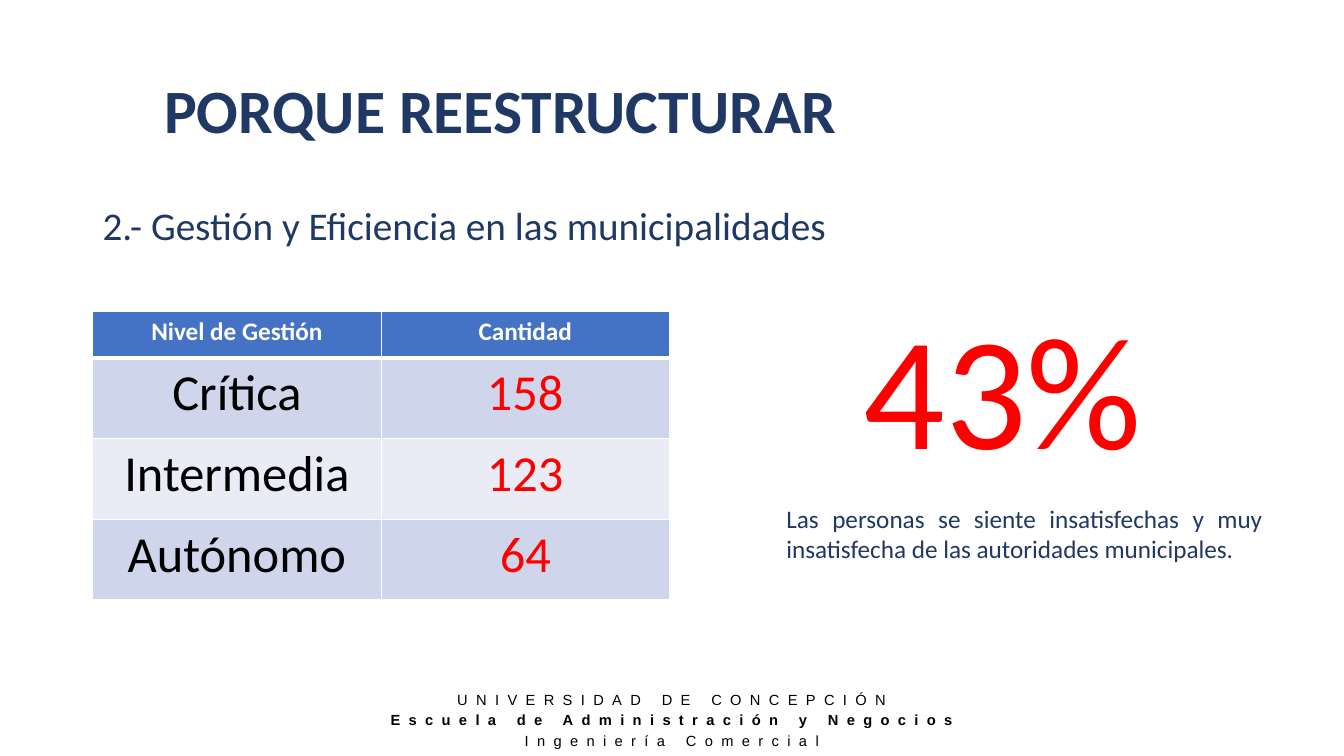
from lxml.etree import SubElement
from pptx import Presentation
from pptx.dml.color import RGBColor
from pptx.enum.text import MSO_ANCHOR as ANCHOR, PP_ALIGN as ALIGN
from pptx.oxml.ns import qn
from pptx.util import Pt

PX = 9144  # EMU per px, 100 px to the inch

NAVY = RGBColor(0x20, 0x38, 0x64)
RED = RGBColor(0xFF, 0x00, 0x00)
BLACK = RGBColor(0x00, 0x00, 0x00)
WHITE = RGBColor(0xFF, 0xFF, 0xFF)
BLUE = RGBColor(0x44, 0x72, 0xC4)
BANDS = (RGBColor(0xCF, 0xD5, 0xEA), RGBColor(0xE9, 0xEB, 0xF5))

# Content
TITLE = "PORQUE REESTRUCTURAR"
SUBTITLE = "2.- Gestión y Eficiencia en las municipalidades"
LEVELS = [
    ("Nivel de Gestión", "Cantidad"),
    ("Crítica", "158"),
    ("Intermedia", "123"),
    ("Autónomo", "64"),
]
SHARE = "43%"
SHARE_NOTE = ("Las personas se siente insatisfechas y muy insatisfecha "
              "de las autoridades municipales.")
FOOTER = [
    ("UNIVERSIDAD DE CONCEPCIÓN", False),
    ("Escuela de Administración y Negocios", True),
    ("Ingeniería Comercial", False),
]

# Layout in px: left, top, width, height
SLIDE = (1333, 750)
FOOTER_BOX = (0, 678, 1333, 72)
TITLE_BOX = (153, 40, 997, 145)
SUBTITLE_BOX = (92, 200, 1107, 67)
NOTE_BOX = (770, 494, 492, 71)
SHARE_BOX = (847, 281, 303, 204)
TABLE_LEFT, TABLE_TOP, COL_W, HEAD_H, ROW_H = 92, 309, 286, 46, 80


def emu(box):
    return [v * PX for v in box]


def style(p, size, color, bold=False, align=ALIGN.LEFT, name="Calibri"):
    p.alignment = align
    f = p.font
    f.size, f.bold, f.name = Pt(size), bold, name
    f.color.rgb = color


def add_text(box, text, size, color, bold=False, align=ALIGN.LEFT,
             anchor=ANCHOR.TOP, spacing=1.0, wrap=True):
    tf = s.shapes.add_textbox(*emu(box)).text_frame
    tf.word_wrap, tf.vertical_anchor = wrap, anchor
    p = tf.paragraphs[0]
    p.text, p.line_spacing = text, spacing
    style(p, size, color, bold, align)


def set_borders(cell, widths):
    tcPr = cell._tc.get_or_add_tcPr()
    for i, (side, width) in enumerate(zip("LRTB", widths)):
        ln = SubElement(tcPr, qn("a:ln" + side), w=str(Pt(width)))
        fill = SubElement(ln, qn("a:solidFill"))
        SubElement(fill, qn("a:srgbClr"), val=str(WHITE))
        tcPr.remove(ln)
        tcPr.insert(i, ln)  # borders come before the fill


prs = Presentation()
prs.slide_width, prs.slide_height = emu(SLIDE)
s = prs.slides.add_slide(prs.slide_layouts[6])

# Footer
tf = s.shapes.add_textbox(*emu(FOOTER_BOX)).text_frame
tf.word_wrap = True
for i, (line, bold) in enumerate(FOOTER):
    p = tf.paragraphs[0] if i == 0 else tf.add_paragraph()
    r = p.add_run()
    r.text = line
    r.font._element.set("spc", "600")
    p.line_spacing = 1.15
    style(p, 10.5, BLACK, bold, ALIGN.CENTER, "Arial")

# Headings
add_text(TITLE_BOX, TITLE, 44, NAVY, bold=True, anchor=ANCHOR.MIDDLE, spacing=0.9)
add_text(SUBTITLE_BOX, SUBTITLE, 28, NAVY, spacing=0.9)

# Table of management levels
rows, cols = len(LEVELS), len(LEVELS[0])
table_box = (TABLE_LEFT, TABLE_TOP, cols * COL_W, HEAD_H + (rows - 1) * ROW_H)
table = s.shapes.add_table(rows, cols, *emu(table_box)).table
for col in table.columns:
    col.width = COL_W * PX
for i, values in enumerate(LEVELS):
    head = i == 0
    table.rows[i].height = (HEAD_H if head else ROW_H) * PX
    for j, value in enumerate(values):
        cell = table.cell(i, j)
        cell.text = value
        cell.fill.solid()
        cell.fill.fore_color.rgb = BLUE if head else BANDS[(i - 1) % 2]
        set_borders(cell, (1, 1, 3 if i == 1 else 1, 3 if head else 1))
        color = WHITE if head else (BLACK, RED)[j]
        style(cell.text_frame.paragraphs[0], 18 if head else 36, color, head, ALIGN.CENTER)

# Dissatisfaction figure
add_text(NOTE_BOX, SHARE_NOTE, 18, NAVY, align=ALIGN.JUSTIFY)
add_text(SHARE_BOX, SHARE, 115, RED, wrap=False)

prs.save("out.pptx")
